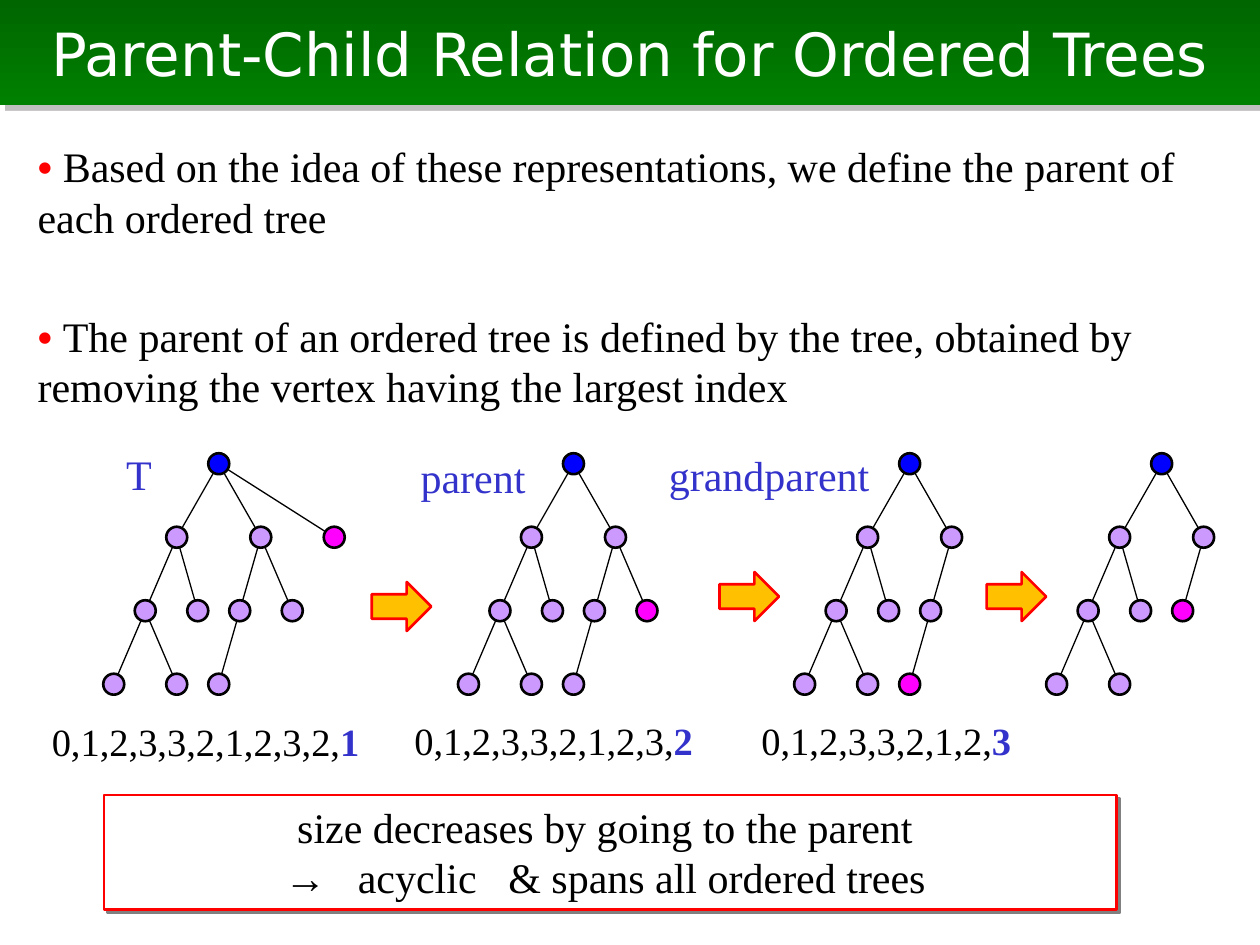
import pptx
import pptx.util
import pptx.dml.color
import pptx.enum.shapes
import pptx.enum.text
import pptx.oxml
import pptx.oxml.ns
import lxml.etree

Pt = pptx.util.Pt
RGBColor = pptx.dml.color.RGBColor
SHAPE = pptx.enum.shapes.MSO_SHAPE
ANCHOR = pptx.enum.text.MSO_ANCHOR
ALIGN = pptx.enum.text.PP_ALIGN

BLACK = RGBColor(0x00, 0x00, 0x00)
WHITE = RGBColor(0xFF, 0xFF, 0xFF)
RED = RGBColor(0xFF, 0x00, 0x00)
DARK_GREEN = RGBColor(0x00, 0x66, 0x00)
GREEN = RGBColor(0x00, 0x80, 0x00)
INDIGO = RGBColor(0x33, 0x33, 0xCC)
ROOT_BLUE = RGBColor(0x00, 0x00, 0xFF)
LILAC = RGBColor(0xCC, 0x99, 0xFF)
MAGENTA = RGBColor(0xFF, 0x00, 0xFF)
ORANGE = RGBColor(0xFF, 0xC0, 0x00)
SHADOW_GRAY = "808080"

SERIF = "Times New Roman"
SANS = "DejaVu Sans"

TITLE = "Parent-Child Relation for Ordered Trees"
BULLETS = [
    ("Based on the idea of these representations, we define the parent of each ordered tree", 5),
    ("The parent of an ordered tree is defined by the tree, obtained by removing the vertex having the largest index", 39),
]
CONCLUSION = [
    ["size decreases by going to the parent"],
    ["→", "acyclic", "& spans all ordered trees"],
]
WIDE_SPACE = 12

VERTICES = [
    (0, 0), (1, -24), (2, -42), (3, -60), (3, -24), (2, -12),
    (1, 24), (2, 12), (3, 0), (2, 42), (1, 66),
]
TREES = [
    {"root": 125, "size": 11, "label": ("T", 65, 252.7, 29), "code": (22.5, 406.5, 207)},
    {"root": 327.7, "size": 10, "label": ("parent", 233.3, 254.5, 80), "code": (229.7, 406.1, 191)},
    {"root": 519.8, "size": 9, "label": ("grandparent", 375.1, 253.4, 135), "code": (428, 406.1, 176)},
    {"root": 663.8, "size": 8},
]
ARROWS = [(212.4, 332.6), (411.1, 326.9), (563.8, 326.9)]

ROOT_Y = 265
LEVEL_GAP = 42
DIAMETER = 12


def add_shadow(shape, distance, alpha):
    shadow = pptx.oxml.parse_xml(
        f'<a:effectLst {pptx.oxml.ns.nsdecls("a")}>'
        f'<a:outerShdw dist="{Pt(distance)}" dir="2700000" algn="ctr" rotWithShape="0">'
        f'<a:srgbClr val="{SHADOW_GRAY}"><a:alpha val="{alpha * 1000}"/></a:srgbClr>'
        '</a:outerShdw></a:effectLst>')
    properties = shape._element.spPr
    properties.replace(properties.find(pptx.oxml.ns.qn("a:effectLst")), shadow)


def add_figure(shapes, kind, left, top, width, height, fill, line):
    shape = shapes.add_shape(kind, Pt(left), Pt(top), Pt(width), Pt(height))
    shape.shadow.inherit = False
    shape.fill.solid()
    shape.fill.fore_color.rgb = fill
    shape.line.color.rgb = line
    shape.line.width = Pt(1.5)
    return shape


def set_font(font, size, color, name=SERIF):
    font.size = Pt(size)
    font.name = name
    font.color.rgb = color


def add_span(para, text, color, bold=False):
    span = para.add_run()
    span.text = text
    span.font.color.rgb = color
    span.font.bold = bold
    return span


def add_text_frame(shapes, left, top, width, height, wrap=True):
    frame = shapes.add_textbox(Pt(left), Pt(top), Pt(width), Pt(height)).text_frame
    frame.word_wrap = wrap
    return frame


def add_title(page):
    bar = page.shapes.add_shape(SHAPE.RECTANGLE, 0, 0, Pt(720), Pt(60))
    bar.shadow.inherit = False
    add_shadow(bar, 4.2, 50)
    bar.fill.gradient()
    bar.fill.gradient_angle = 270
    for stop, color in zip(bar.fill.gradient_stops, (DARK_GREEN, GREEN)):
        stop.color.rgb = color
    bar.line.fill.background()
    bar.text_frame.vertical_anchor = ANCHOR.MIDDLE
    para = bar.text_frame.paragraphs[0]
    para.text = TITLE
    para.alignment = ALIGN.CENTER
    set_font(para.font, 34, WHITE, SANS)


def add_bullets(page):
    frame = add_text_frame(page.shapes, 14.4, 77, 669, 192)
    for index, (text, gap) in enumerate(BULLETS):
        para = frame.add_paragraph() if index else frame.paragraphs[0]
        para.space_before = Pt(gap)
        set_font(para.font, 24, BLACK)
        add_span(para, "• ", RED, True)
        add_span(para, text, BLACK)


def add_tree(page, tree):
    shapes = page.shapes.add_group_shape().shapes
    vertices = VERTICES[:tree["size"]]
    centers = [(tree["root"] + offset, ROOT_Y + LEVEL_GAP * depth) for depth, offset in vertices]
    branch = {}
    for (depth, _), center in zip(vertices, centers):
        branch[depth] = center
        if depth:
            ends = [Pt(value) for value in branch[depth - 1] + center]
            edge = shapes.add_connector(pptx.enum.shapes.MSO_CONNECTOR.STRAIGHT, *ends)
            edge.line.color.rgb = BLACK
            edge.line.width = Pt(0.75)
            lxml.etree.SubElement(edge._element.spPr, pptx.oxml.ns.qn("a:effectLst"))
    colors = [ROOT_BLUE] + [LILAC] * (len(vertices) - 2) + [MAGENTA]
    for (x, y), color in zip(centers, colors):
        add_figure(shapes, SHAPE.OVAL, x - DIAMETER / 2, y - DIAMETER / 2,
                   DIAMETER, DIAMETER, color, BLACK)
    if "label" in tree:
        text, left, top, width = tree["label"]
        para = add_text_frame(shapes, left, top, width, 36, wrap=False).paragraphs[0]
        para.text = text
        set_font(para.font, 24, INDIGO)
        left, top, width = tree["code"]
        para = add_text_frame(shapes, left, top, width, 34).paragraphs[0]
        set_font(para.font, 22, BLACK)
        depths = [str(depth) for depth, _ in vertices]
        add_span(para, ",".join(depths[:-1]) + ",", BLACK)
        add_span(para, depths[-1], INDIGO, True)


def add_conclusion(page):
    box = add_figure(page.shapes, SHAPE.RECTANGLE, 59.5, 454.2, 578.5, 65.5, WHITE, RED)
    add_shadow(box, 2.8, 100)
    frame = box.text_frame
    frame.word_wrap = True
    frame.vertical_anchor = ANCHOR.TOP
    frame.margin_right = Pt(13)
    for index, parts in enumerate(CONCLUSION):
        para = frame.add_paragraph() if index else frame.paragraphs[0]
        para.alignment = ALIGN.CENTER
        set_font(para.font, 24, BLACK)
        for position, part in enumerate(parts):
            if position:
                space = add_span(para, " ", BLACK)
                space._r.get_or_add_rPr().set("spc", str(WIDE_SPACE * 100))
            add_span(para, part, BLACK)


def main():
    deck = pptx.Presentation()
    deck.slide_width, deck.slide_height = Pt(720), Pt(540)
    page = deck.slides.add_slide(deck.slide_layouts[6])
    add_title(page)
    add_bullets(page)
    for tree in TREES:
        add_tree(page, tree)
    for left, top in ARROWS:
        add_figure(page.shapes, SHAPE.RIGHT_ARROW, left, top, 34, 28, ORANGE, RED)
    add_conclusion(page)
    deck.save("out.pptx")


if __name__ == "__main__":
    main()
